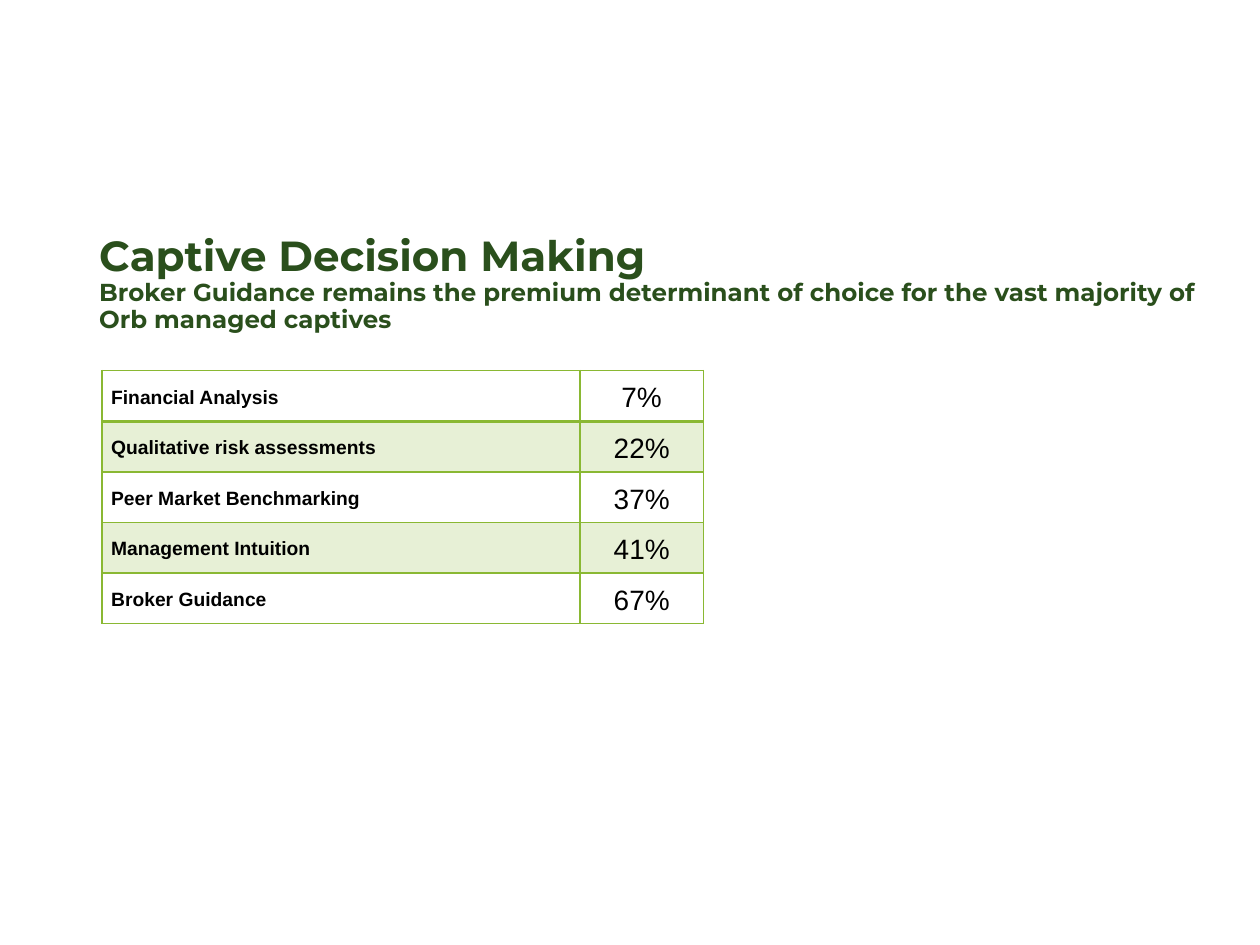
from typing import NamedTuple

from lxml import etree
from pptx import Presentation
from pptx import util as u
from pptx.dml.color import RGBColor
from pptx.enum import text
from pptx.oxml import ns

DARK_GREEN = RGBColor(0x2A, 0x4F, 0x1C)
LEAF_GREEN = RGBColor(0x8A, 0xB8, 0x33)
BLACK = RGBColor(0, 0, 0)
ROW_HEIGHT = u.Cm(1.02)
COLUMN_WIDTHS = (u.Cm(9.63), u.Cm(2.49))


class Heading(NamedTuple):
    wording: str
    size: int


class Factor(NamedTuple):
    name: str
    share: str


HEADINGS = (
    Heading("Captive Decision Making", 24),
    Heading("Broker Guidance remains the premium determinant of choice "
            "for the vast majority of Orb managed captives", 14),
)
FACTORS = (
    Factor("Financial Analysis", "7%"),
    Factor("Qualitative risk assessments", "22%"),
    Factor("Peer Market Benchmarking", "37%"),
    Factor("Management Intuition", "41%"),
    Factor("Broker Guidance", "67%"),
)


def add_run(paragraph, wording: str, font_name: str, size: int,
            color: RGBColor, bold: bool) -> None:
    run = paragraph.add_run()
    run.text = wording
    run.font.name = font_name
    run.font.size = u.Pt(size)
    run.font.color.rgb = color
    run.font.bold = bold


def add_headings(slide) -> None:
    box = slide.shapes.add_textbox(u.Cm(1.75), u.Cm(4.62), u.Cm(23.11), u.Cm(1.6))
    frame = box.text_frame
    frame.word_wrap = True
    for index, heading in enumerate(HEADINGS):
        paragraph = frame.add_paragraph() if index else frame.paragraphs[0]
        paragraph.line_spacing = 0.9
        add_run(paragraph, heading.wording, "Montserrat", heading.size, DARK_GREEN, True)


def set_borders(cell, top: float, bottom: float) -> None:
    properties = cell._tc.get_or_add_tcPr()
    widths = {"a:lnL": 1, "a:lnR": 1, "a:lnT": top, "a:lnB": bottom}
    for position, (side, width) in enumerate(widths.items()):
        line = etree.Element(ns.qn(side), w=str(u.Pt(width)))
        fill = etree.SubElement(line, ns.qn("a:solidFill"))
        etree.SubElement(fill, ns.qn("a:srgbClr"), val=str(LEAF_GREEN))
        properties.insert(position, line)


def set_fill(cell, tinted: bool) -> None:
    if not tinted:
        cell.fill.background()
        return
    cell.fill.solid()
    cell.fill.fore_color.rgb = LEAF_GREEN
    color = cell._tc.tcPr.find(".//" + ns.qn("a:srgbClr"))
    etree.SubElement(color, ns.qn("a:alpha"), val="20000")


def fill_cell(cell, wording: str, row: int, is_share: bool) -> None:
    cell.vertical_anchor = text.MSO_ANCHOR.MIDDLE
    cell.margin_left = cell.margin_right = u.Cm(0.18)
    cell.margin_top = cell.margin_bottom = 0
    set_fill(cell, tinted=row % 2 == 1)
    set_borders(cell, top=2 if row == 1 else 1, bottom=2 if row == 0 else 1)
    paragraph = cell.text_frame.paragraphs[0]
    paragraph.line_spacing = 1.15
    paragraph.space_after = u.Pt(6)
    paragraph.alignment = text.PP_ALIGN.CENTER if is_share else text.PP_ALIGN.LEFT
    add_run(paragraph, wording, "Arial", 16 if is_share else 11, BLACK, not is_share)


def add_factor_table(slide) -> None:
    frame = slide.shapes.add_table(
        len(FACTORS), len(COLUMN_WIDTHS), u.Cm(2.06), u.Cm(7.47),
        sum(COLUMN_WIDTHS), ROW_HEIGHT * len(FACTORS))
    table = frame.table
    table.first_row = table.horz_banding = False
    for column, width in zip(table.columns, COLUMN_WIDTHS):
        column.width = width
    for row, factor in enumerate(FACTORS):
        table.rows[row].height = ROW_HEIGHT
        for column, wording in enumerate(factor):
            fill_cell(table.cell(row, column), wording, row, is_share=column == 1)


def main() -> None:
    deck = Presentation()
    deck.slide_width, deck.slide_height = u.Cm(25.4), u.Cm(19.05)
    slide = deck.slides.add_slide(deck.slide_layouts[6])
    add_headings(slide)
    add_factor_table(slide)
    deck.save("out.pptx")


if __name__ == "__main__":
    main()
